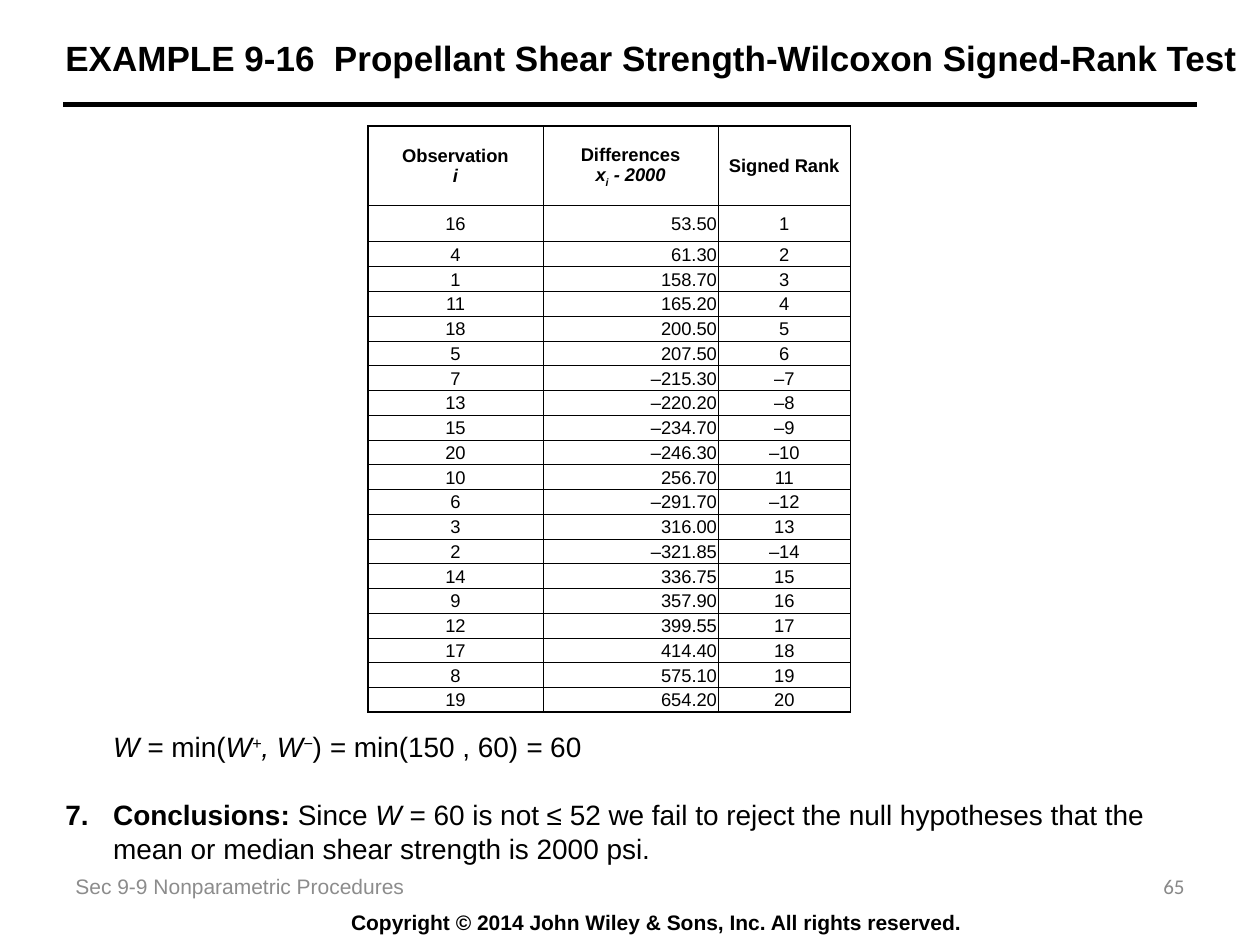
"""Build the Wilcoxon signed-rank example slide with its ranking table and conclusion."""
import lxml.etree
import pptx
import pptx.dml.color
import pptx.enum.shapes
import pptx.enum.text
import pptx.oxml
import pptx.oxml.ns
import pptx.util

ALIGN = pptx.enum.text.PP_ALIGN
ANCHOR = pptx.enum.text.MSO_ANCHOR
INCHES = pptx.util.Inches
WIDTH, HEIGHT = 10, 7.5
BLACK, GREY = "000000", "8C8C8C"

TITLE = "EXAMPLE 9-16  Propellant Shear Strength-Wilcoxon Signed-Rank Test"
SECTION = "Sec 9-9 Nonparametric Procedures"
PAGE = "65"
COPYRIGHT = "Copyright © 2014 John Wiley & Sons, Inc. All rights reserved."

STATISTIC = [("W = ", "i"), ("min(", ""), ("W", "i"), ("+", "i^"), (", W", "i"), ("−", "i^"),
             (")", ""), (" = ", "i"), ("min(150 , 60)", ""), (" = ", "i"), ("60", "")]
CONCLUSION = [("Conclusions: ", "b"), ("Since ", ""), ("W ", "i"),
              ("= 60 is not ≤ 52 we fail to reject the null hypotheses that the "
               "mean or median shear strength is 2000 psi.", "")]

HEADINGS = [
    [("Observation", "b"), ("\n", ""), ("i", "bi")],
    [("Differences", "b"), ("\n", ""), ("x", "bi"), ("i", "bi_"), (" - 2000", "bi")],
    [("Signed Rank", "b")],
]
RANKS = [
    ("16", "53.50", "1"), ("4", "61.30", "2"), ("1", "158.70", "3"),
    ("11", "165.20", "4"), ("18", "200.50", "5"), ("5", "207.50", "6"),
    ("7", "–215.30", "–7"), ("13", "–220.20", "–8"), ("15", "–234.70", "–9"),
    ("20", "–246.30", "–10"), ("10", "256.70", "11"), ("6", "–291.70", "–12"),
    ("3", "316.00", "13"), ("2", "–321.85", "–14"), ("14", "336.75", "15"),
    ("9", "357.90", "16"), ("12", "399.55", "17"), ("17", "414.40", "18"),
    ("8", "575.10", "19"), ("19", "654.20", "20"),
]
COLUMN_WIDTHS = [1.39, 1.39, 1.05]
COLUMN_ALIGNS = [ALIGN.CENTER, ALIGN.RIGHT, ALIGN.CENTER]
TABLE_LEFT, TABLE_TOP, TABLE_HEIGHT = 2.92, 1, 4.66
HEADING_HEIGHT, FIRST_HEIGHT = 0.63, 0.29
HANGING = INCHES(0.38)


def colour(hex_code):
    return pptx.dml.color.RGBColor.from_string(hex_code)


def write(paragraph, pieces, size, ink=BLACK, face="Arial", align=ALIGN.LEFT):
    """Fill a paragraph; style marks are b bold, i italic, ^ superscript, _ subscript."""
    paragraph.alignment = align
    for words, style in pieces:
        if words == "\n":
            paragraph.add_line_break()
            continue
        run = paragraph.add_run()
        run.text = words
        run.font.name, run.font.size = face, pptx.util.Pt(size)
        run.font.bold, run.font.italic = "b" in style, "i" in style
        run.font.color.rgb = colour(ink)
        if "^" in style or "_" in style:
            run._r.get_or_add_rPr().set("baseline", "30000" if "^" in style else "-25000")


def add_text(slide, box, pieces, size, anchor=ANCHOR.MIDDLE, **look):
    """Place a wrapping text box and return its frame."""
    frame = slide.shapes.add_textbox(*map(INCHES, box)).text_frame
    frame.word_wrap = True
    frame.vertical_anchor = anchor
    write(frame.paragraphs[0], pieces, size, **look)
    return frame


def add_borders(cell, widths):
    """Draw the left, right, top and bottom borders of a cell."""
    properties = cell._tc.get_or_add_tcPr()
    for side, points in zip("LRTB", widths):
        properties.append(pptx.oxml.parse_xml(
            f'<a:ln{side} {pptx.oxml.ns.nsdecls("a")} w="{pptx.util.Pt(points)}">'
            f'<a:solidFill><a:srgbClr val="{BLACK}"/></a:solidFill></a:ln{side}>'))


def add_ranking(slide):
    """Add the table of observations ordered by absolute difference."""
    rows = [HEADINGS] + [[[(value, "")] for value in rank] for rank in RANKS]
    last_row, last_column = len(rows) - 1, len(COLUMN_WIDTHS) - 1
    table = slide.shapes.add_table(
        len(rows), len(COLUMN_WIDTHS), INCHES(TABLE_LEFT), INCHES(TABLE_TOP),
        INCHES(sum(COLUMN_WIDTHS)), INCHES(TABLE_HEIGHT)).table
    table.first_row = table.horz_banding = False
    for column, width in zip(table.columns, COLUMN_WIDTHS):
        column.width = INCHES(width)
    plain_height = (TABLE_HEIGHT - HEADING_HEIGHT - FIRST_HEIGHT) / (last_row - 1)
    heights = [HEADING_HEIGHT, FIRST_HEIGHT] + [plain_height] * (last_row - 1)
    for r, row in enumerate(rows):
        table.rows[r].height = INCHES(heights[r])
        for c, pieces in enumerate(row):
            cell = table.cell(r, c)
            cell.margin_left = cell.margin_right = cell.margin_top = INCHES(0.01)
            cell.margin_bottom = 0
            cell.vertical_anchor = ANCHOR.MIDDLE
            outer = (c == 0, c == last_column, r == 0, r == last_row)
            add_borders(cell, [1 if edge else 0.5 for edge in outer])
            cell.fill.background()
            align = COLUMN_ALIGNS[c] if r else ALIGN.CENTER
            write(cell.text_frame.paragraphs[0], pieces, 10.5, align=align)


def add_result(slide):
    """Add the test statistic and the numbered conclusion."""
    frame = add_text(slide, (0.42, 5.74, 9.33, 1.2), STATISTIC, 16, anchor=ANCHOR.TOP)
    frame.paragraphs[0]._p.get_or_add_pPr().set("marL", str(HANGING))
    conclusion = frame.add_paragraph()
    properties = conclusion._p.get_or_add_pPr()
    properties.set("marL", str(HANGING))
    properties.set("indent", str(-HANGING))
    number = lxml.etree.SubElement(properties, pptx.oxml.ns.qn("a:buAutoNum"))
    number.set("type", "arabicPeriod")
    number.set("startAt", "7")
    conclusion.space_before = pptx.util.Pt(20)
    write(conclusion, CONCLUSION, 16)


def main():
    deck = pptx.Presentation()
    deck.slide_width, deck.slide_height = INCHES(WIDTH), INCHES(HEIGHT)
    slide = deck.slides.add_slide(deck.slide_layouts[6])

    rule = slide.shapes.add_connector(
        pptx.enum.shapes.MSO_CONNECTOR.STRAIGHT,
        INCHES(0.5), INCHES(0.83), INCHES(WIDTH - 0.5), INCHES(0.83))
    rule.line.color.rgb = colour(BLACK)
    rule.line.width = pptx.util.Pt(3)
    lxml.etree.SubElement(rule._element.spPr, pptx.oxml.ns.qn("a:effectLst"))

    add_text(slide, (0.42, 0, 9.58, 0.92), [(TITLE, "b")], 20)
    add_ranking(slide)
    add_result(slide)
    add_text(slide, (0.5, 6.83, 5.42, 0.4), [(SECTION, "")], 12, ink=GREY)
    add_text(slide, (8.33, 6.83, 1.17, 0.4), [(PAGE, "")], 12,
             ink="898989", face="Calibri", align=ALIGN.RIGHT)
    add_text(slide, (1.67, 7.17, 7.08, 0.3), [(COPYRIGHT, "b")], 12,
             anchor=ANCHOR.TOP, align=ALIGN.CENTER)
    deck.save("out.pptx")


if __name__ == "__main__":
    main()
